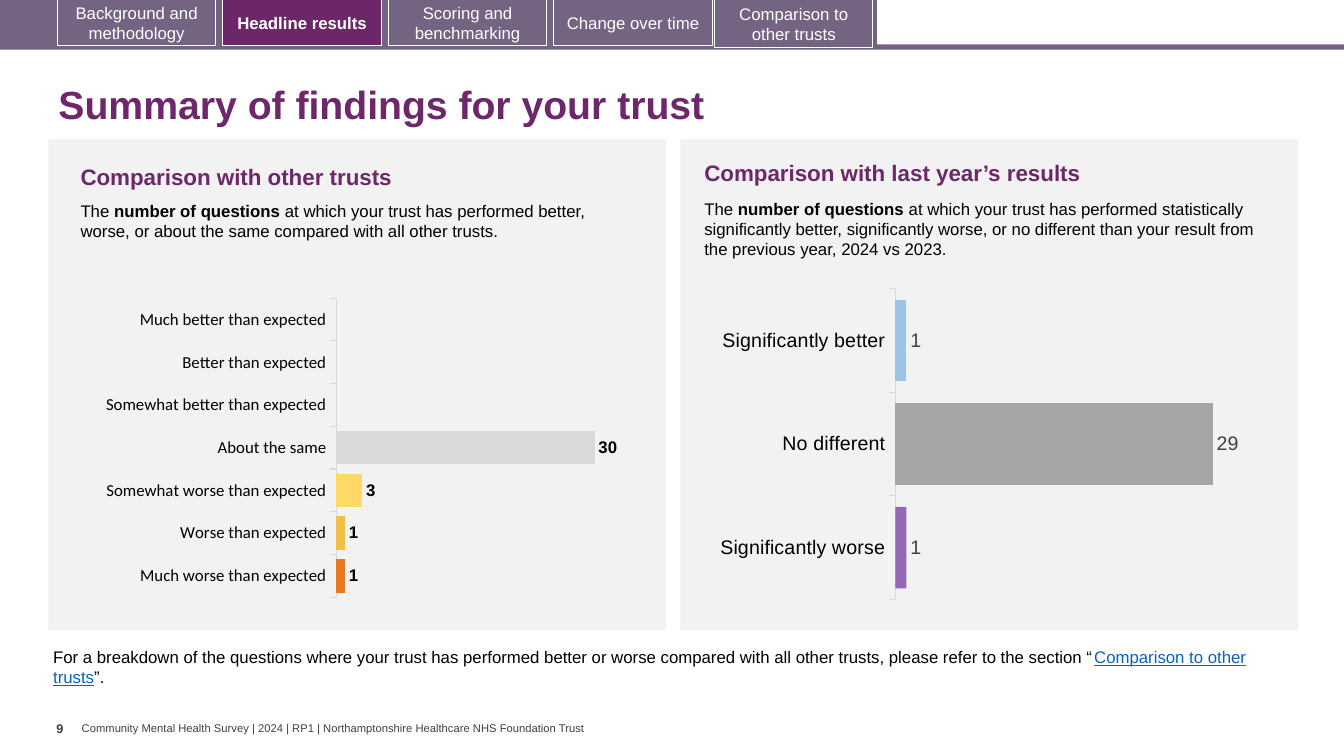
from lxml import etree
from pptx import Presentation
from pptx.chart import data
from pptx.dml.color import RGBColor
from pptx.enum import chart as kinds, shapes, text
from pptx.oxml import ns
from pptx.util import Cm, Pt

PLUM = RGBColor(0x6D, 0x27, 0x6A)
ACTIVE = RGBColor(0x6B, 0x27, 0x68)
MAUVE = RGBColor(0x75, 0x63, 0x82)
PANEL = RGBColor(0xF2, 0xF2, 0xF2)
RULE = RGBColor(0xD9, 0xD9, 0xD9)
WHITE = RGBColor(0xFF, 0xFF, 0xFF)
BLACK = RGBColor(0, 0, 0)
DARK = RGBColor(0x40, 0x40, 0x40)
LINK = RGBColor(0x05, 0x63, 0xC1)
TEAL = RGBColor(0x41, 0x99, 0x99)
GREEN = RGBColor(0x5F, 0xBD, 0x83)
LIME = RGBColor(0xA9, 0xD1, 0x8E)
YELLOW = RGBColor(0xFF, 0xD9, 0x66)
GOLD = RGBColor(0xF1, 0xBE, 0x48)
ORANGE = RGBColor(0xE8, 0x77, 0x22)
BLUE = RGBColor(0x9D, 0xC3, 0xE6)
GREY = RGBColor(0xA5, 0xA5, 0xA5)
VIOLET = RGBColor(0x70, 0x30, 0xA0)

TABS = ["Background and methodology", "Headline results", "Scoring and benchmarking",
        "Change over time", "Comparison to other trusts"]
TRUSTS = [("Much better than expected", None, TEAL),
          ("Better than expected", None, GREEN),
          ("Somewhat better than expected", None, LIME),
          ("About the same", 30, RULE),
          ("Somewhat worse than expected", 3, YELLOW),
          ("Worse than expected", 1, GOLD),
          ("Much worse than expected", 1, ORANGE)]
YEARS = [("Significantly better", 1, BLUE),
         ("No different", 29, GREY),
         ("Significantly worse", 1, VIOLET)]


def style(font, size, color, bold=False, name="Arial"):
    font.name, font.size, font.bold = name, Pt(size), bold
    font.color.rgb = color


def add_run(par, words, size, color=BLACK, bold=False):
    run = par.add_run()
    run.text = words
    style(run.font, size, color, bold)
    return run


def add_box(slide, box, wrap=True):
    """Add an empty text box and return its frame."""
    frame = slide.shapes.add_textbox(*map(Cm, box)).text_frame
    frame.word_wrap = wrap
    return frame


def add_rect(slide, box, fill, line=None):
    rect = slide.shapes.add_shape(shapes.MSO_SHAPE.RECTANGLE, *map(Cm, box))
    rect.shadow.inherit = False
    rect.fill.solid()
    rect.fill.fore_color.rgb = fill
    if line is None:
        rect.line.fill.background()
    else:
        rect.line.color.rgb = line
        rect.line.width = Pt(0.75)
    return rect


def add_tab(slide, left, top, label, active):
    tab = add_rect(slide, (left, top, 3.99, 1.19), ACTIVE if active else MAUVE, WHITE)
    frame = tab.text_frame
    frame.word_wrap = True
    frame.vertical_anchor = text.MSO_ANCHOR.MIDDLE
    par = frame.paragraphs[0]
    par.alignment = text.PP_ALIGN.CENTER
    add_run(par, label, 12, WHITE, active)


def add_nav(slide):
    add_rect(slide, (0, 1.12, 33.87, 0.13), MAUVE)
    add_rect(slide, (0, 0, 22.1, 1.19), MAUVE)
    for i, label in enumerate(TABS[:-1]):
        add_tab(slide, 1.45 + 4.17 * i, -0.03, label, label == "Headline results")
    add_tab(slide, 18.01, 0, TABS[-1], False)


def set_title(slide, words):
    title = slide.shapes.title
    title.left, title.top, title.width, title.height = map(Cm, (1.22, 1.78, 31.72, 1.83))
    frame = title.text_frame
    frame.auto_size = text.MSO_AUTO_SIZE.NONE
    frame.vertical_anchor = text.MSO_ANCHOR.MIDDLE
    par = frame.paragraphs[0]
    par.alignment = text.PP_ALIGN.LEFT
    par.line_spacing = 0.9
    add_run(par, words, 28, PLUM, True)


def add_panel(slide, left, head, head_box, tail, tail_box):
    add_rect(slide, (left, 3.51, 15.57, 12.37), PANEL)
    add_run(add_box(slide, head_box).paragraphs[0], head, 16, PLUM, True)
    par = add_box(slide, tail_box).paragraphs[0]
    add_run(par, "The ", 12)
    add_run(par, "number of questions ", 12, bold=True)
    add_run(par, tail, 12)


def set_plot(chart, *area):
    """Fix the inner plot area, given as fractions of the chart."""
    plot = chart.element.find(".//" + ns.qn("c:plotArea"))
    for old in plot.findall(ns.qn("c:layout")):
        plot.remove(old)
    layout = etree.Element(ns.qn("c:layout"))
    manual = etree.SubElement(layout, ns.qn("c:manualLayout"))
    tags = ["layoutTarget", "xMode", "yMode", "x", "y", "w", "h"]
    for tag, val in zip(tags, ["inner", "edge", "edge", *area]):
        etree.SubElement(manual, ns.qn("c:" + tag), val=str(val))
    plot.insert(0, layout)


def add_bars(slide, box, rows, area, size, face, color, bold):
    source = data.CategoryChartData(number_format="0")
    source.categories = [row[0] for row in rows]
    source.add_series("Series 1", [row[1] for row in rows])
    chart = slide.shapes.add_chart(
        kinds.XL_CHART_TYPE.BAR_CLUSTERED, *map(Cm, box), source).chart
    chart.has_legend = chart.has_title = False
    style(chart.font, size, BLACK, name=face)
    set_plot(chart, *area)

    cats = chart.category_axis
    cats.reverse_order = True
    cats.has_major_gridlines = False
    cats.major_tick_mark = kinds.XL_TICK_MARK.OUTSIDE
    cats.format.line.color.rgb = RULE
    cats.format.line.width = Pt(0.75)
    style(cats.tick_labels.font, size, BLACK, name=face)
    vals = chart.value_axis
    vals.visible = vals.has_major_gridlines = False
    vals.minimum_scale, vals.maximum_scale = 0, 35

    plot = chart.plots[0]
    plot.gap_width = 27
    plot.vary_by_categories = False
    series = plot.series[0]
    for i, (_, _, tint) in enumerate(rows):
        fill = series.points[i].format.fill
        fill.solid()
        fill.fore_color.rgb = tint
    labels = series.data_labels
    labels.show_value = True
    labels.position = kinds.XL_LABEL_POSITION.OUTSIDE_END
    labels.number_format, labels.number_format_is_linked = "0", False
    style(labels.font, size, color, bold)
    return chart


def fade_last(chart, alpha):
    """Make the last bar partly transparent, with alpha in percent."""
    point = chart.element.findall(".//" + ns.qn("c:dPt"))[-1]
    tint = point.find(".//" + ns.qn("a:srgbClr"))
    etree.SubElement(tint, ns.qn("a:alpha"), val=str(alpha * 1000))


def add_foot(slide):
    par = add_box(slide, (1.09, 16.18, 31.01, 1.27)).paragraphs[0]
    add_run(par, "For a breakdown of the questions where your trust has performed better or "
            "worse compared with all other trusts, please refer to the section “", 12)
    add_run(par, "Comparison to other trusts", 12, LINK).font.underline = True
    add_run(par, "”.", 12)
    page = add_box(slide, (1.42, 18.03, 0.64, 1.02), False)
    page.margin_left = page.margin_right = 0
    add_run(page.paragraphs[0], "9", 9, DARK, True)
    foot = add_box(slide, (2.06, 18.19, 12.83, 0.33), False)
    foot.margin_left = foot.margin_right = foot.margin_top = foot.margin_bottom = 0
    foot.vertical_anchor = text.MSO_ANCHOR.MIDDLE
    add_run(foot.paragraphs[0], "Community Mental Health Survey | 2024 | RP1 | "
            "Northamptonshire Healthcare NHS Foundation Trust", 8, DARK)


def main():
    deck = Presentation()
    deck.slide_width, deck.slide_height = Cm(33.87), Cm(19.05)
    slide = deck.slides.add_slide(deck.slide_layouts[5])
    add_nav(slide)
    set_title(slide, "Summary of findings for your trust")
    add_panel(slide, 1.22, "Comparison with other trusts", (1.78, 3.99, 14.02, 0.94),
              "at which your trust has performed better, worse, or about the same "
              "compared with all other trusts.", (1.78, 4.93, 13.44, 1.8))
    add_bars(slide, (1.04, 6.91, 15.82, 8.66), TRUSTS, (0.47, 0.07, 0.48, 0.87),
             12, "Calibri", BLACK, True)
    add_panel(slide, 17.15, "Comparison with last year’s results", (17.5, 3.89, 13.92, 0.94),
              "at which your trust has performed statistically significantly better, "
              "significantly worse, or no different than your result from the previous "
              "year, 2024 vs 2023.", (17.5, 4.88, 14.58, 1.8))
    years = add_bars(slide, (16.87, 6.93, 15.82, 8.61), YEARS, (0.36, 0.04, 0.61, 0.91),
                     14, "Arial", DARK, False)
    fade_last(years, 71)
    add_foot(slide)
    deck.save("out.pptx")


if __name__ == "__main__":
    main()
